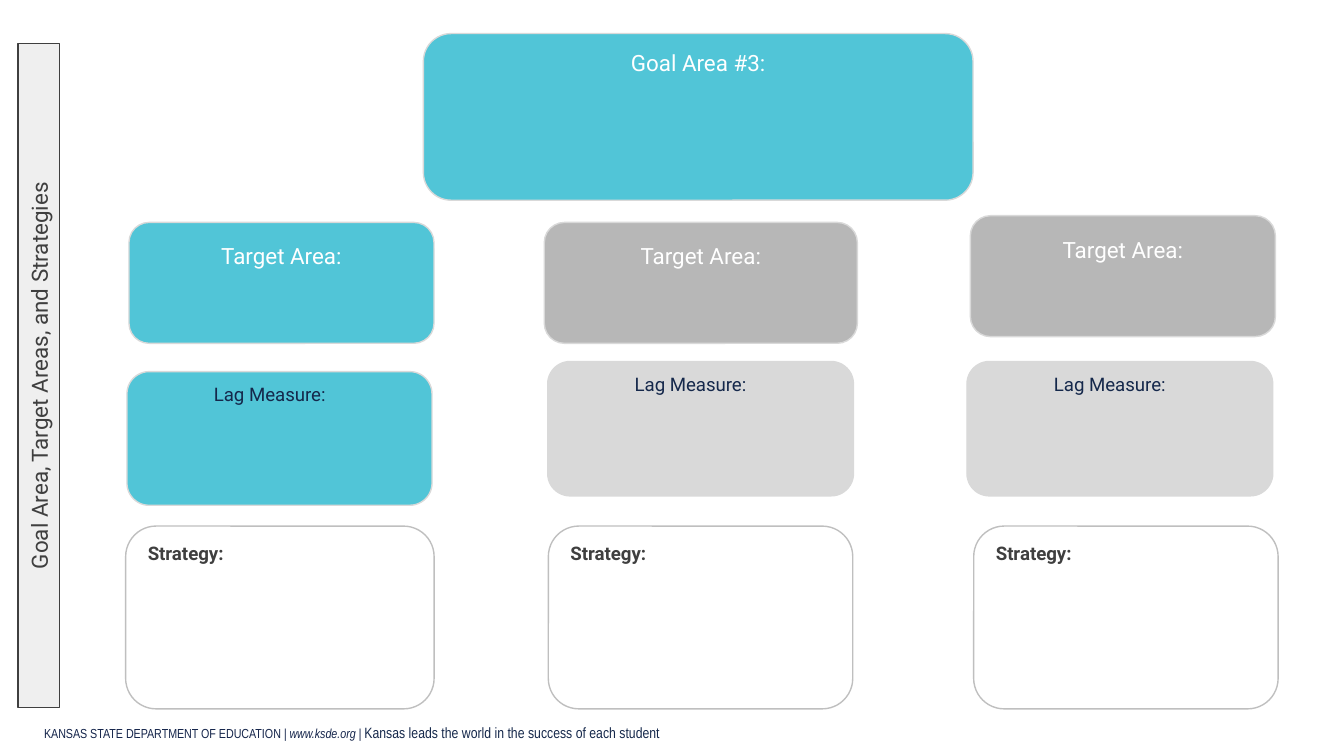
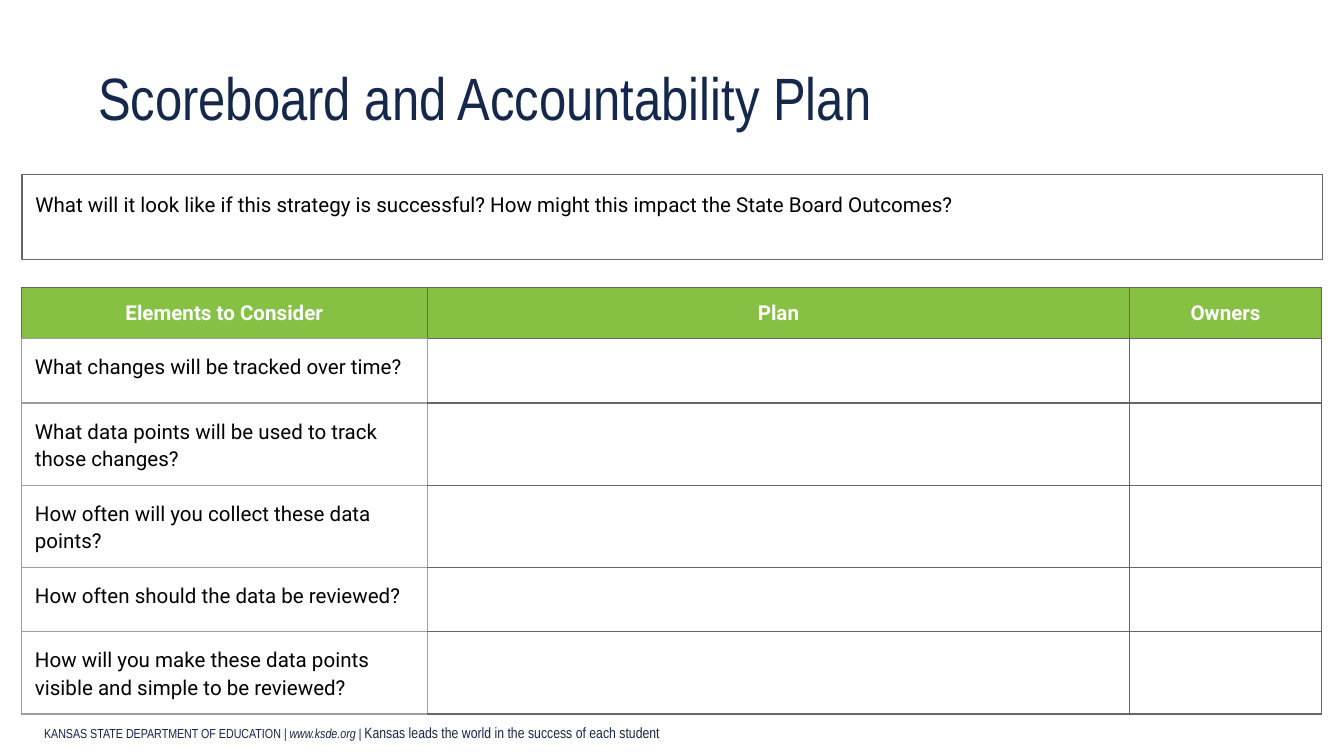
from lxml.etree import SubElement
from pptx import Presentation
from pptx.dml.color import RGBColor
from pptx.enum.shapes import MSO_SHAPE
from pptx.enum.text import MSO_ANCHOR, PP_ALIGN
from pptx.oxml.ns import qn
from pptx.util import Pt

PX = 4572
NAVY = RGBColor(0x15, 0x28, 0x4B)
INK = RGBColor(0x15, 0x25, 0x4B)
DARK = RGBColor(0x3F, 0x3F, 0x3F)
BLACK = RGBColor(0, 0, 0)
WHITE = RGBColor(0xFF, 0xFF, 0xFF)
TEAL = RGBColor(0x51, 0xC5, 0xD7)
GREEN = RGBColor(0x86, 0xC1, 0x44)
STONE = RGBColor(0xB7, 0xB7, 0xB7)
SILVER = RGBColor(0xBF, 0xBF, 0xBF)
PALE = RGBColor(0xD9, 0xD9, 0xD9)
MIST = RGBColor(0xEF, 0xEF, 0xEF)
RULE = RGBColor(0x66, 0x66, 0x66)
SOFT = RGBColor(0x9E, 0x9E, 0x9E)
SANS = "Roboto"
NARROW = "Arial Narrow"

TARGETS = [((192, 331, 454, 180), TEAL), ((810, 331, 466, 180), STONE),
           ((1444, 321, 454, 180), STONE)]
LAGS = [((189, 553, 454, 199), TEAL), ((815, 538, 455, 200), PALE),
        ((1439, 538, 455, 200), PALE)]
PLANS = [(187, 783, 459, 272), (816, 783, 453, 272), (1449, 783, 453, 272)]
HEADS = ["Elements to Consider", "Plan", "Owners"]
ASKS = [
    "What changes will be tracked over time?",
    "What data points will be used to track those changes?",
    "How often will you collect these data points?",
    "How often should the data be reviewed?",
    "How will you make these data points visible and simple to be reviewed?",
]


def scale(box):
    return [n * PX for n in box]


def write(frame, text, size=12, color=BLACK, font=SANS, bold=False,
          slant=False, align=PP_ALIGN.LEFT, space=None, indent=0):
    para = frame.paragraphs[0]
    para.alignment = align
    if space:
        para.line_spacing = space
    if indent:
        para._p.get_or_add_pPr().set("indent", str(indent * PX))
    run = para.add_run()
    run.text = text
    run.font.size = Pt(size)
    run.font.name = font
    run.font.bold = bold
    run.font.italic = slant
    run.font.color.rgb = color


def set_frame(frame, anchor, pads):
    frame.word_wrap = True
    frame.vertical_anchor = anchor
    (frame.margin_left, frame.margin_top,
     frame.margin_right, frame.margin_bottom) = scale(pads)


def add_card(slide, box, fill, line, text, kind=MSO_SHAPE.ROUNDED_RECTANGLE,
             anchor=MSO_ANCHOR.TOP, pads=(20, 10, 20, 10), **style):
    card = slide.shapes.add_shape(kind, *scale(box))
    card.shadow.inherit = False
    card.fill.solid()
    card.fill.fore_color.rgb = fill
    card.line.color.rgb = line
    card.line.width = Pt(0.75)
    set_frame(card.text_frame, anchor, pads)
    write(card.text_frame, text, **style)
    return card


def add_label(slide, box, anchor, pads):
    frame = slide.shapes.add_textbox(*scale(box)).text_frame
    set_frame(frame, anchor, pads)
    return frame


def add_footer(slide, box):
    frame = add_label(slide, box, MSO_ANCHOR.BOTTOM, (20, 10, 20, 10))
    write(frame, "KANSAS STATE DEPARTMENT OF EDUCATION ", size=7,
          font=NARROW, color=INK)
    write(frame, "| www.ksde.org | ", size=7, font=NARROW, color=INK,
          slant=True)
    write(frame, "Kansas leads the world in the success of each student",
          size=8, font=NARROW, color=NAVY)


def add_title(slide, box, text):
    frame = add_label(slide, box, MSO_ANCHOR.BOTTOM, (80, 20, 20, 0))
    write(frame, text, size=32, font=NARROW, color=NAVY)


def add_side(slide, box, text):
    left, top, wide, high = box
    shift = (high - wide) // 2
    side = add_card(slide, (left - shift, top + shift, high, wide), MIST, DARK,
                    text, kind=MSO_SHAPE.RECTANGLE, anchor=MSO_ANCHOR.MIDDLE,
                    color=DARK, align=PP_ALIGN.CENTER)
    side.rotation = 270


def add_goals(slide):
    add_side(slide, (27, 65, 62, 988),
             "Goal Area, Target Areas, and Strategies")
    add_card(slide, (630, 50, 818, 248), TEAL, PALE, "Goal Area #3:",
             pads=(20, 11, 20, 10), color=WHITE, align=PP_ALIGN.CENTER)
    for box, fill in TARGETS:
        add_card(slide, box, fill, PALE, "Target Area:",
                 pads=(20, 21, 20, 10), color=WHITE, align=PP_ALIGN.CENTER)
    for box, fill in LAGS:
        add_card(slide, box, fill, PALE, "Lag Measure:",
                 pads=(20, 7, 20, 10), size=10, color=NAVY, indent=100)
    for box in PLANS:
        add_card(slide, box, WHITE, SILVER, "Strategy:", size=10, color=DARK,
                 bold=True)


def set_edge(cell, side, color):
    line = SubElement(cell._tc.get_or_add_tcPr(), qn("a:ln" + side),
                      w=str(Pt(0.75)))
    fill = SubElement(line, qn("a:solidFill"))
    SubElement(fill, qn("a:srgbClr"), val=str(color))


def is_soft(row, col, side):
    if col == 0:
        return row > 0 or side == "B"
    return row > 0 and col == 1 and side == "L"


def add_grid(slide, box, cols, rows):
    grid = slide.shapes.add_table(len(rows), len(cols), *scale(box)).table
    grid.first_row = grid.horz_banding = False
    for col, wide in enumerate(cols):
        grid.columns[col].width = wide * PX
    for row, high in enumerate(rows):
        grid.rows[row].height = high * PX
        for col in range(len(cols)):
            cell = grid.cell(row, col)
            cell.margin_left = cell.margin_right = 20 * PX
            cell.margin_top = (18 if row and col else 20) * PX
            cell.margin_bottom = (18 if row else 19) * PX
            for side in "LRTB":
                tone = SOFT if is_soft(row, col, side) else RULE
                set_edge(cell, side, tone)
            if row and not col:
                cell.fill.background()
            else:
                cell.fill.solid()
                cell.fill.fore_color.rgb = WHITE if row else GREEN
            if row == 0:
                write(cell.text_frame, HEADS[col], size=11, color=WHITE,
                      bold=True, align=PP_ALIGN.CENTER)
            elif col == 0:
                write(cell.text_frame, ASKS[row - 1], size=11, space=1.15)


def add_board(slide):
    add_title(slide, (66, 0, 1900, 197), "Scoreboard and Accountability Plan")
    add_card(slide, (33, 260, 1935, 126), WHITE, RULE,
             "What will it look like if this strategy is successful? "
             "How might this impact the State Board Outcomes?",
             kind=MSO_SHAPE.RECTANGLE, pads=(20, 20, 20, 20), size=11,
             space=1.15)
    add_grid(slide, (32, 428, 1935, 500), (604, 1045, 286),
             [70] + [86] * len(ASKS))


def main():
    deck = Presentation()
    deck.slide_width, deck.slide_height = scale((2000, 1125))
    for build in (add_goals, add_board):
        slide = deck.slides.add_slide(deck.slide_layouts[6])
        add_footer(slide, (46, 1065, 1320, 48))
        build(slide)
    deck.save("out.pptx")


if __name__ == "__main__":
    main()
